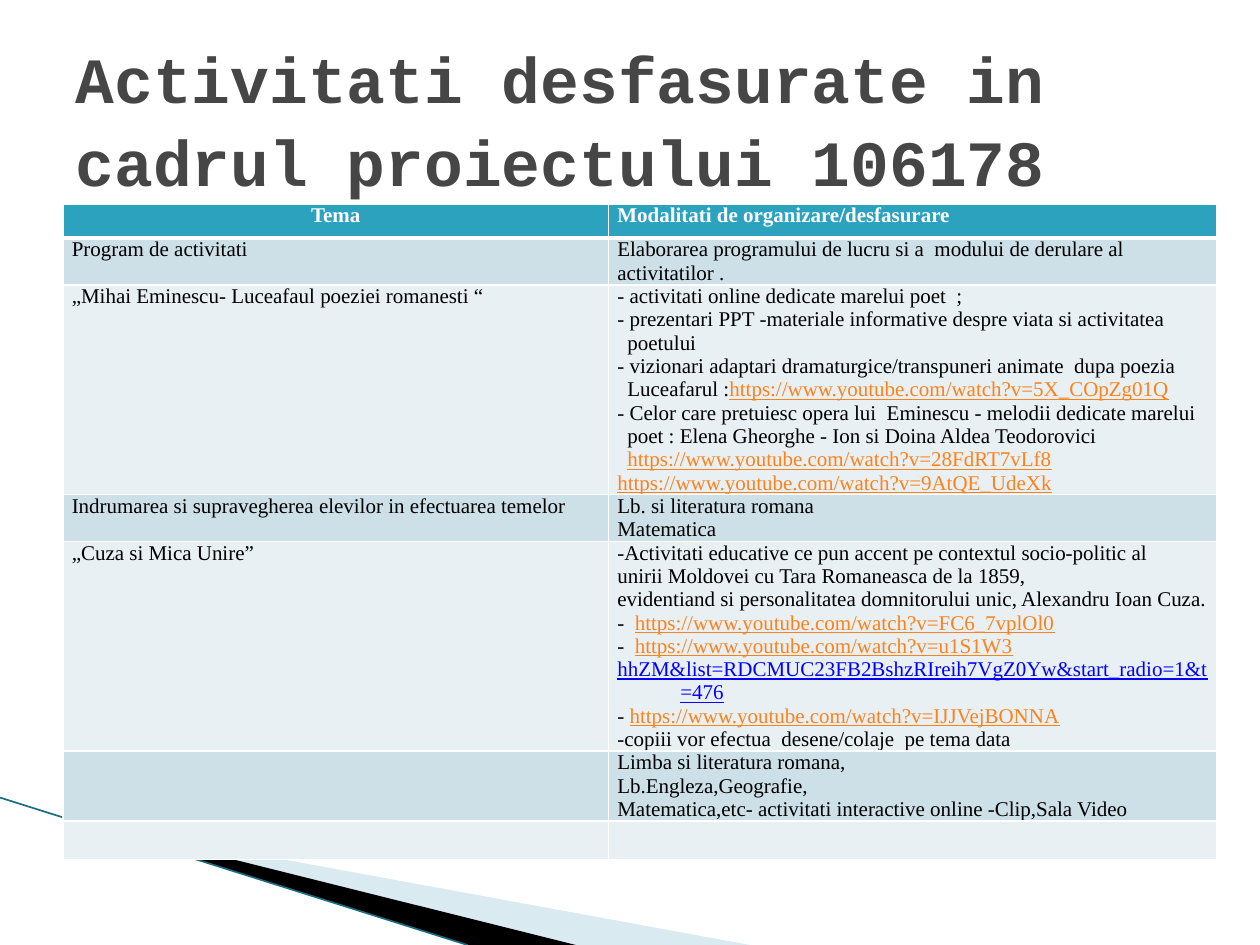
from lxml import etree
from pptx import Presentation
from pptx.dml.color import RGBColor
from pptx.enum.shapes import MSO_CONNECTOR as Conn
from pptx.enum.text import MSO_ANCHOR as Anchor, PP_ALIGN as Align
from pptx.oxml import parse_xml
from pptx.oxml.ns import nsdecls, qn
from pptx.util import Inches, Pt

WHITE = RGBColor(0xFF, 0xFF, 0xFF)
BLACK = RGBColor(0x00, 0x00, 0x00)
GREY = RGBColor(0x46, 0x46, 0x46)
TEAL = RGBColor(0x2D, 0xA2, 0xBF)
DEEP = RGBColor(0x1A, 0x6D, 0x80)
PALE = RGBColor(0xA0, 0xCB, 0xDC)
BANDS = (RGBColor(0xE8, 0xF0, 0xF4), RGBColor(0xCD, 0xE0, 0xE8))
LINKS = {"http": RGBColor(0xFF, 0x81, 0x19), "hhZM": RGBColor(0x00, 0x00, 0xFF)}

TUBE = "https://www.youtube.com/watch?v="
# Each row: theme, paragraphs as lists of runs, hanging indent in inches
ROWS = [
    ("Tema", [["Modalitati de organizare/desfasurare"]], 0),
    ("Program de activitati",
     [["Elaborarea programului de lucru si a  modului de derulare al activitatilor ."]], 0),
    ("„Mihai Eminescu- Luceafaul poeziei romanesti “", [
        ["- activitati online dedicate marelui poet  ;"],
        ["- prezentari PPT -materiale informative despre viata si activitatea poetului"],
        ["- vizionari adaptari dramaturgice/transpuneri animate  dupa poezia Luceafarul :",
         TUBE + "5X_COpZg01Q"],
        ["- Celor care pretuiesc opera lui  Eminescu - melodii dedicate marelui poet : "
         "Elena Gheorghe - Ion si Doina Aldea Teodorovici ", TUBE + "28FdRT7vLf8"],
        [TUBE + "9AtQE_UdeXk"]], 0.08),
    ("Indrumarea si supravegherea elevilor in efectuarea temelor",
     [["Lb. si literatura romana"], ["Matematica"]], 0),
    ("„Cuza si Mica Unire”", [
        ["-Activitati educative ce pun accent pe contextul socio-politic al"],
        ["unirii Moldovei cu Tara Romaneasca de la 1859,"],
        ["evidentiand si personalitatea domnitorului unic, Alexandru Ioan Cuza."],
        ["-  ", TUBE + "FC6_7vplOl0"],
        ["-  ", TUBE + "u1S1W3"],
        ["hhZM&list=RDCMUC23FB2BshzRIreih7VgZ0Yw&start_radio=1&t=476"],
        ["- ", TUBE + "IJJVejBONNA"],
        ["-copiii vor efectua  desene/colaje  pe tema data"]], 0.5),
    ("", [["Limba si literatura romana,"], ["Lb.Engleza,Geografie,"],
          ["Matematica,etc- activitati interactive online -Clip,Sala Video"]], 0),
    ("", [], 0),
]
PAD = {"margin_left": Inches(0.07), "margin_right": Inches(0.07),
       "margin_top": 0, "margin_bottom": 0}


def style(obj, form):
    for key, val in form.items():
        setattr(obj, key, val)


def edge(cell, top, low):
    """Draw white cell borders; top and low are widths in points."""
    props = cell._tc.get_or_add_tcPr()
    for i, (side, width) in enumerate((("L", 1), ("R", 1), ("T", top), ("B", low))):
        props.insert(i, parse_xml(
            f'<a:ln{side} {nsdecls("a")} w="{Pt(width)}"><a:solidFill>'
            f'<a:srgbClr val="{WHITE}"/></a:solidFill></a:ln{side}>'))


deck = Presentation()
deck.slide_width, deck.slide_height = Inches(10), Inches(7.5)
slide = deck.slides.add_slide(deck.slide_layouts[5])
shapes = slide.shapes

# Corner wedges and the thin line beside them
WEDGES = [
    ([(0.55, 6.51), (5.95, 7.5), (4.56, 7.5), (0.55, 6.5)], PALE, 40),
    ([(0.53, 6.49), (4.57, 7.5), (3.72, 7.5), (0.54, 6.5)], BLACK, 100),
]
for spots, tint, alpha in WEDGES:
    spots = [(Inches(x), Inches(y)) for x, y in spots]
    pen = shapes.build_freeform(*spots[0], scale=1.0)
    pen.add_line_segments(spots[1:], close=True)
    wedge = pen.convert_to_shape()
    wedge.shadow.inherit = False
    wedge.line.fill.background()
    wedge.fill.solid()
    wedge.fill.fore_color.rgb = tint
    clr = wedge.fill._xPr.find(".//" + qn("a:srgbClr"))
    etree.SubElement(clr, qn("a:alpha"), val=str(alpha * 1000))

line = shapes.add_connector(Conn.STRAIGHT, 0, Inches(6.33), Inches(3.71), Inches(7.5))
line.line.color.rgb = DEEP
line.line.width = Pt(0.95)
etree.SubElement(line._element.spPr, qn("a:effectLst"))

# Table
table = shapes.add_table(len(ROWS), 2, Inches(0.5), Inches(1.62),
                         Inches(9.16), Inches(0.27 * len(ROWS))).table
for col, width in zip(table.columns, (4.33, 4.83)):
    col.width = Inches(width)

for r, (theme, paras, hang) in enumerate(ROWS):
    head = r == 0
    for c, texts in enumerate(([[theme]] if theme else [], paras)):
        cell = table.cell(r, c)
        style(cell, PAD)
        cell.fill.solid()
        cell.fill.fore_color.rgb = TEAL if head else BANDS[r % 2]
        edge(cell, 3 if r == 1 else 1, 3 if head else 1)
        for i, runs in enumerate(texts):
            frame = cell.text_frame
            para = frame.add_paragraph() if i else frame.paragraphs[0]
            if head:
                para.alignment = (Align.CENTER, Align.JUSTIFY)[c]
            if c and hang:
                props = para._p.get_or_add_pPr()
                props.set("marL", str(Inches(hang)))
                props.set("indent", str(-Inches(hang)))
            for text in runs:
                run = para.add_run()
                run.text = text
                tint = LINKS.get(text[:4])
                style(run.font, {"name": "Times New Roman", "size": Pt(12),
                                 "bold": head, "underline": tint is not None})
                run.font.color.rgb = tint or (WHITE if head else BLACK)

# Title
title = shapes.title
style(title, {"left": Inches(0.5), "top": Inches(0.3),
              "width": Inches(9), "height": Inches(1.25)})
title.text_frame.text = "Activitati desfasurate in cadrul proiectului 106178"
style(title.text_frame, {"vertical_anchor": Anchor.MIDDLE, "word_wrap": True})
para = title.text_frame.paragraphs[0]
style(para, {"alignment": Align.LEFT, "line_spacing": 1.07})
font = para.runs[0].font
style(font, {"name": "Courier New", "size": Pt(36.9), "bold": True})
font.color.rgb = GREY

deck.save("out.pptx")
